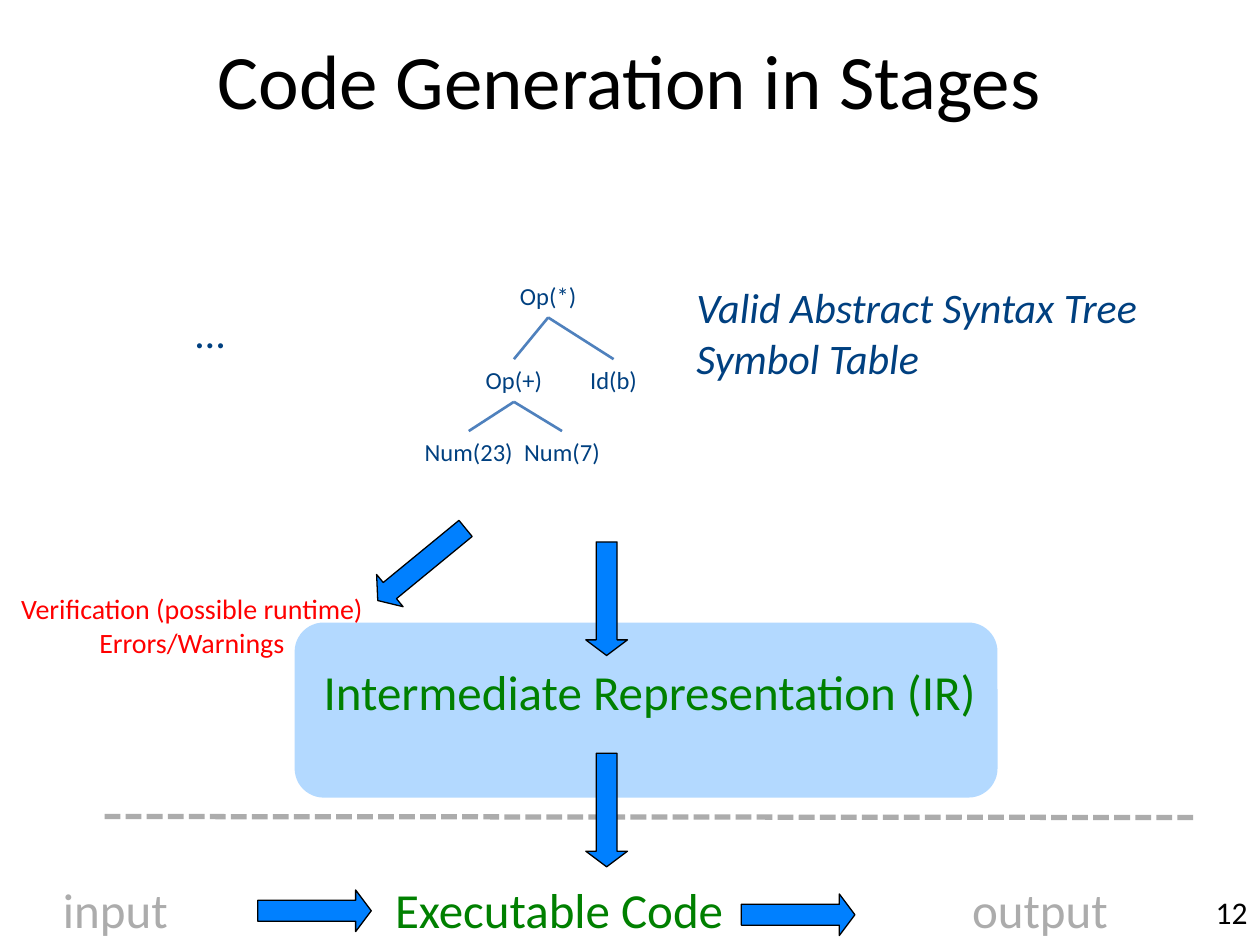
from dataclasses import dataclass

from lxml.etree import SubElement
from pptx import Presentation
from pptx.dml.color import RGBColor
from pptx.enum.dml import MSO_LINE_DASH_STYLE as Dash
from pptx.enum.shapes import MSO_CONNECTOR as Connector, MSO_SHAPE as Preset
from pptx.enum.text import MSO_ANCHOR as Anchor, PP_ALIGN as Align
from pptx.oxml.ns import qn
from pptx.slide import Slide
from pptx.util import Cm, Pt


@dataclass(frozen=True)
class Theme:
    font: str = "Calibri"
    black: str = "000000"
    navy: str = "004080"
    red: str = "FF0000"
    green: str = "008000"
    gray: str = "ACACAC"
    panel: str = "B3D9FF"
    arrow: str = "0080FF"
    branch: str = "4F81BD"
    title: int = 44
    stage: int = 28
    body: int = 24
    number: int = 18
    warning: int = 16
    node: int = 14


THEME = Theme()
NODE_HEIGHT = 0.86
ARROW_WIDTH = 0.84
ARROW_LENGTH = 2.29


@dataclass(frozen=True)
class Label:
    text: str
    left: float
    top: float
    width: float
    height: float
    size: int
    color: str
    align: Align = Align.CENTER
    anchor: Anchor = Anchor.TOP
    italic: bool = False
    wrap: bool = True


@dataclass(frozen=True)
class Node:
    text: str
    center: float
    top: float
    width: float


@dataclass(frozen=True)
class Arrow:
    center_x: float
    center_y: float
    rotation: float = 0


PRODUCT = Node("Op(*)", 11.05, 5.54, 1.65)
SUM = Node("Op(+)", 10.36, 7.24, 1.65)
IDENTIFIER = Node("Id(b)", 12.37, 7.24, 1.47)
LEFT_NUMBER = Node("Num(23)", 9.45, 8.69, 2.31)
RIGHT_NUMBER = Node("Num(7)", 11.33, 8.69, 2.06)
NODES = [PRODUCT, SUM, IDENTIFIER, LEFT_NUMBER, RIGHT_NUMBER]
BRANCHES = [
    (PRODUCT, IDENTIFIER),
    (PRODUCT, SUM),
    (SUM, LEFT_NUMBER),
    (SUM, RIGHT_NUMBER),
]

LABELS = [
    Label("Code Generation in Stages", 1.9, 0, 21.59, 3.18,
          THEME.title, THEME.black, anchor=Anchor.MIDDLE),
    Label("12", 20.12, 17.88, 5.28, 0.76, THEME.number, THEME.black, Align.RIGHT),
    Label("Valid Abstract Syntax Tree\nSymbol Table", 13.79, 5.56, 10.08, 2.31,
          THEME.body, THEME.navy, Align.LEFT, italic=True),
    Label("…", 0.64, 6.05, 7.19, 1.27, THEME.body, THEME.navy),
    Label("Verification (possible runtime)\nErrors/Warnings", -0.79, 11.81, 9.32, 1.63,
          THEME.warning, THEME.red),
    Label("Intermediate Representation (IR)", 6.15, 13.21, 13.89, 1.45,
          THEME.stage, THEME.green, wrap=False),
    Label("Executable Code", 7.65, 17.6, 7.24, 1.45,
          THEME.stage, THEME.green, wrap=False),
    Label("input", 0, 17.6, 4.65, 1.45, THEME.stage, THEME.gray),
    Label("output", 18.64, 17.6, 4.65, 1.45, THEME.stage, THEME.gray),
]

ARROWS = [
    Arrow(8.5, 11.38, 50.6),
    Arrow(12.23, 12.07),
    Arrow(12.23, 16.33),
    Arrow(6.34, 18.36, 270),
    Arrow(16.09, 18.44, 270),
]


def rgb(color: str) -> RGBColor:
    return RGBColor.from_string(color)


def draw_label(page: Slide, label: Label) -> None:
    box = page.shapes.add_textbox(
        Cm(label.left), Cm(label.top), Cm(label.width), Cm(label.height))
    frame = box.text_frame
    frame.text = label.text
    frame.word_wrap = label.wrap
    frame.vertical_anchor = label.anchor
    for para in frame.paragraphs:
        para.alignment = label.align
        for span in para.runs:
            span.font.name = THEME.font
            span.font.size = Pt(label.size)
            span.font.italic = label.italic
            span.font.color.rgb = rgb(label.color)


def draw_node(page: Slide, node: Node) -> None:
    draw_label(page, Label(
        node.text, node.center - node.width / 2, node.top, node.width, NODE_HEIGHT,
        THEME.node, THEME.navy, wrap=False))


def draw_line(page: Slide, start: tuple[float, float], end: tuple[float, float],
              color: str, width: float, dash: Dash = Dash.SOLID) -> None:
    line = page.shapes.add_connector(
        Connector.STRAIGHT, Cm(start[0]), Cm(start[1]), Cm(end[0]), Cm(end[1]))
    line.line.color.rgb = rgb(color)
    line.line.width = Pt(width)
    line.line.dash_style = dash
    SubElement(line._element.spPr, qn("a:effectLst"))


def draw_panel(page: Slide) -> None:
    panel = page.shapes.add_shape(
        Preset.ROUNDED_RECTANGLE, Cm(5.94), Cm(12.55), Cm(14.17), Cm(3.53))
    panel.shadow.inherit = False
    panel.fill.solid()
    panel.fill.fore_color.rgb = rgb(THEME.panel)
    panel.line.fill.background()


def draw_arrow(page: Slide, arrow: Arrow) -> None:
    shape = page.shapes.add_shape(
        Preset.DOWN_ARROW,
        Cm(arrow.center_x - ARROW_WIDTH / 2), Cm(arrow.center_y - ARROW_LENGTH / 2),
        Cm(ARROW_WIDTH), Cm(ARROW_LENGTH))
    shape.adjustments[0] = 0.5
    shape.adjustments[1] = 0.375
    shape.rotation = arrow.rotation
    shape.shadow.inherit = False
    shape.fill.solid()
    shape.fill.fore_color.rgb = rgb(THEME.arrow)
    shape.line.color.rgb = rgb(THEME.black)
    shape.line.width = Pt(0.75)


def main() -> None:
    deck = Presentation()
    deck.slide_width = Cm(25.4)
    deck.slide_height = Cm(19.05)
    page = deck.slides.add_slide(deck.slide_layouts[6])

    draw_panel(page)
    for node in NODES:
        draw_node(page, node)
    for parent, child in BRANCHES:
        draw_line(page, (parent.center, parent.top + NODE_HEIGHT),
                  (child.center, child.top), THEME.branch, 1.5)
    for label in LABELS:
        draw_label(page, label)
    draw_line(page, (2.11, 16.46), (24.1, 16.48), THEME.gray, 3, Dash.SQUARE_DOT)
    for arrow in ARROWS:
        draw_arrow(page, arrow)

    deck.save("out.pptx")


if __name__ == "__main__":
    main()
